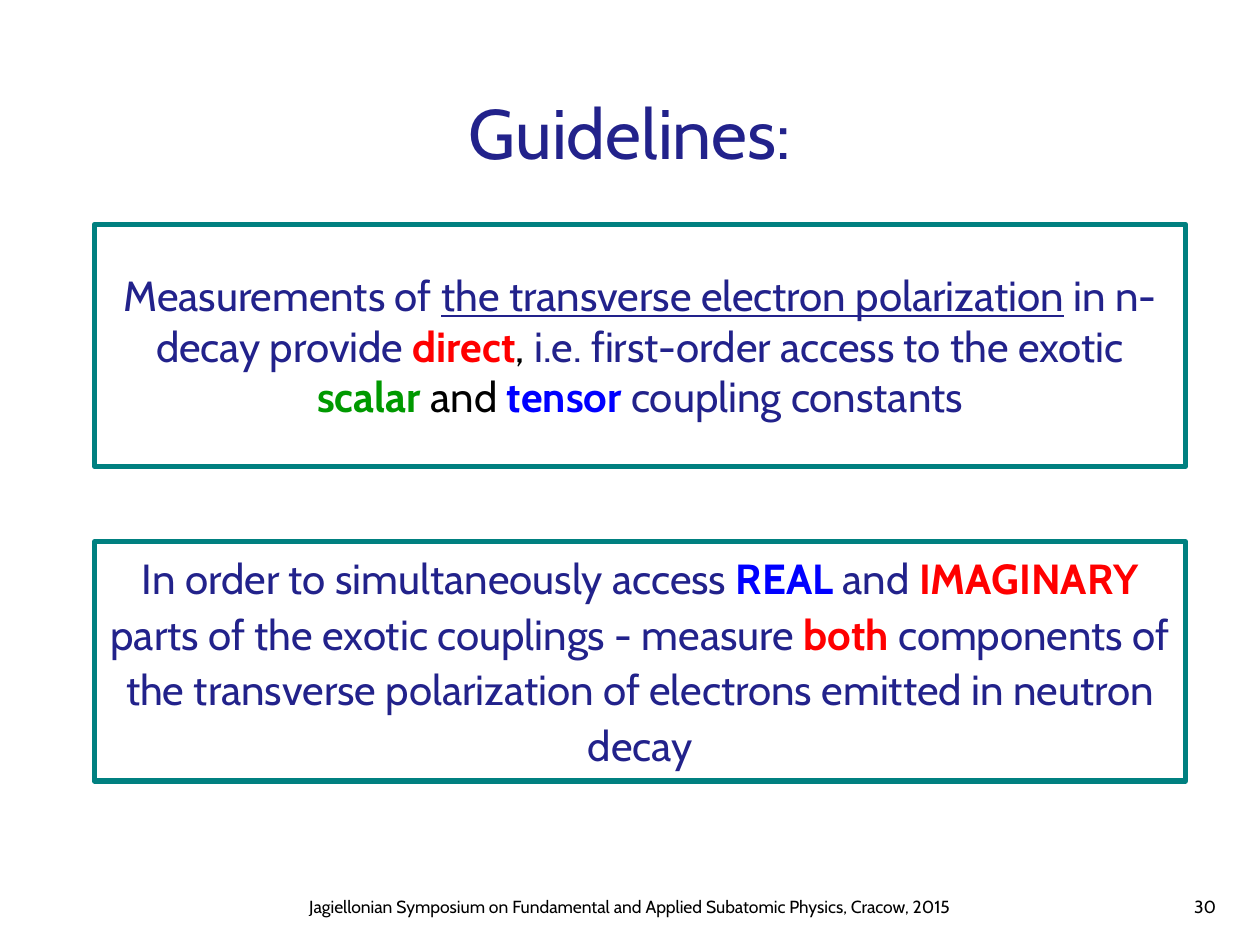
import pptx
import pptx.util
import pptx.dml.color
import pptx.enum.shapes
import pptx.enum.text

Inches = pptx.util.Inches
RGBColor = pptx.dml.color.RGBColor
ALIGN = pptx.enum.text.PP_ALIGN
ANCHOR = pptx.enum.text.MSO_ANCHOR

NAVY = RGBColor(0x22, 0x22, 0x8B)
TEAL = RGBColor(0x00, 0x80, 0x80)
RED = RGBColor(0xFF, 0x00, 0x00)
GREEN = RGBColor(0x00, 0x99, 0x00)
BLUE = RGBColor(0x00, 0x00, 0xFF)
BLACK = RGBColor(0x00, 0x00, 0x00)


def add_run(p, text, size, color, **formats):
    r = p.add_run()
    r.text = text
    r.font.color.rgb = color
    formats = {"name": "Cabin", "size": pptx.util.Pt(size), **formats}
    for name, value in formats.items():
        setattr(r.font, name, value)


prs = pptx.Presentation()
prs.slide_width, prs.slide_height = Inches(10), Inches(7.5)
s = prs.slides.add_slide(prs.slide_layouts[5])

# Title
title = s.shapes.title
title.left, title.top = Inches(0.75), Inches(0.67)
title.width, title.height = Inches(8.5), Inches(0.75)
tf = title.text_frame
tf.auto_size = pptx.enum.text.MSO_AUTO_SIZE.NONE
tf.vertical_anchor = ANCHOR.MIDDLE
tf.paragraphs[0].alignment = ALIGN.CENTER
add_run(tf.paragraphs[0], "Guidelines:", 40, NAVY)

# Framed guidelines: top, height, anchor, line spacing, runs
bold = {"bold": True}
guidelines = [
    (1.78, 1.92, ANCHOR.MIDDLE, 1.0, [
        ("Measurements of ", NAVY, {}),
        ("the transverse electron polarization", NAVY, {"underline": True}),
        (" in n-decay provide ", NAVY, {}),
        ("direct", RED, bold),
        (", ", BLACK, {}),
        ("i.e. first-order access to the exotic ", NAVY, {}),
        ("scalar ", GREEN, bold),
        ("and ", BLACK, {}),
        ("tensor ", BLUE, bold),
        ("coupling constants", NAVY, {}),
    ]),
    (4.3, 1.9, ANCHOR.TOP, 1.1, [
        ("In order to simultaneously access ", NAVY, {}),
        ("REAL ", BLUE, bold),
        ("and ", NAVY, {}),
        ("IMAGINARY ", RED, bold),
        ("parts of the exotic couplings - measure ", NAVY, {}),
        ("both ", RED, bold),
        ("components of the transverse polarization of electrons "
         "emitted in neutron decay", NAVY, {}),
    ]),
]
for top, height, anchor, spacing, runs in guidelines:
    frame = s.shapes.add_shape(
        pptx.enum.shapes.MSO_SHAPE.RECTANGLE,
        Inches(0.75), Inches(top), Inches(8.66), Inches(height))
    frame.shadow.inherit = False
    frame.fill.background()
    frame.line.color.rgb = TEAL
    frame.line.width = pptx.util.Pt(3)
    tf = frame.text_frame
    tf.word_wrap = True
    tf.vertical_anchor = anchor
    p = tf.paragraphs[0]
    p.alignment = ALIGN.CENTER
    p.line_spacing = spacing
    for text, color, formats in runs:
        add_run(p, text, 24, color, **formats)

# Footer and slide number
footers = [
    (0.9, 8.19, ALIGN.CENTER, "Jagiellonian Symposium on Fundamental and "
     "Applied Subatomic Physics, Cracow, 2015"),
    (9.17, 0.58, ALIGN.RIGHT, "30"),
]
for left, width, align, text in footers:
    box = s.shapes.add_textbox(
        Inches(left), Inches(7.06), Inches(width), Inches(0.39))
    tf = box.text_frame
    tf.word_wrap = True
    tf.paragraphs[0].alignment = align
    add_run(tf.paragraphs[0], text, 10, BLACK)

prs.save("out.pptx")
